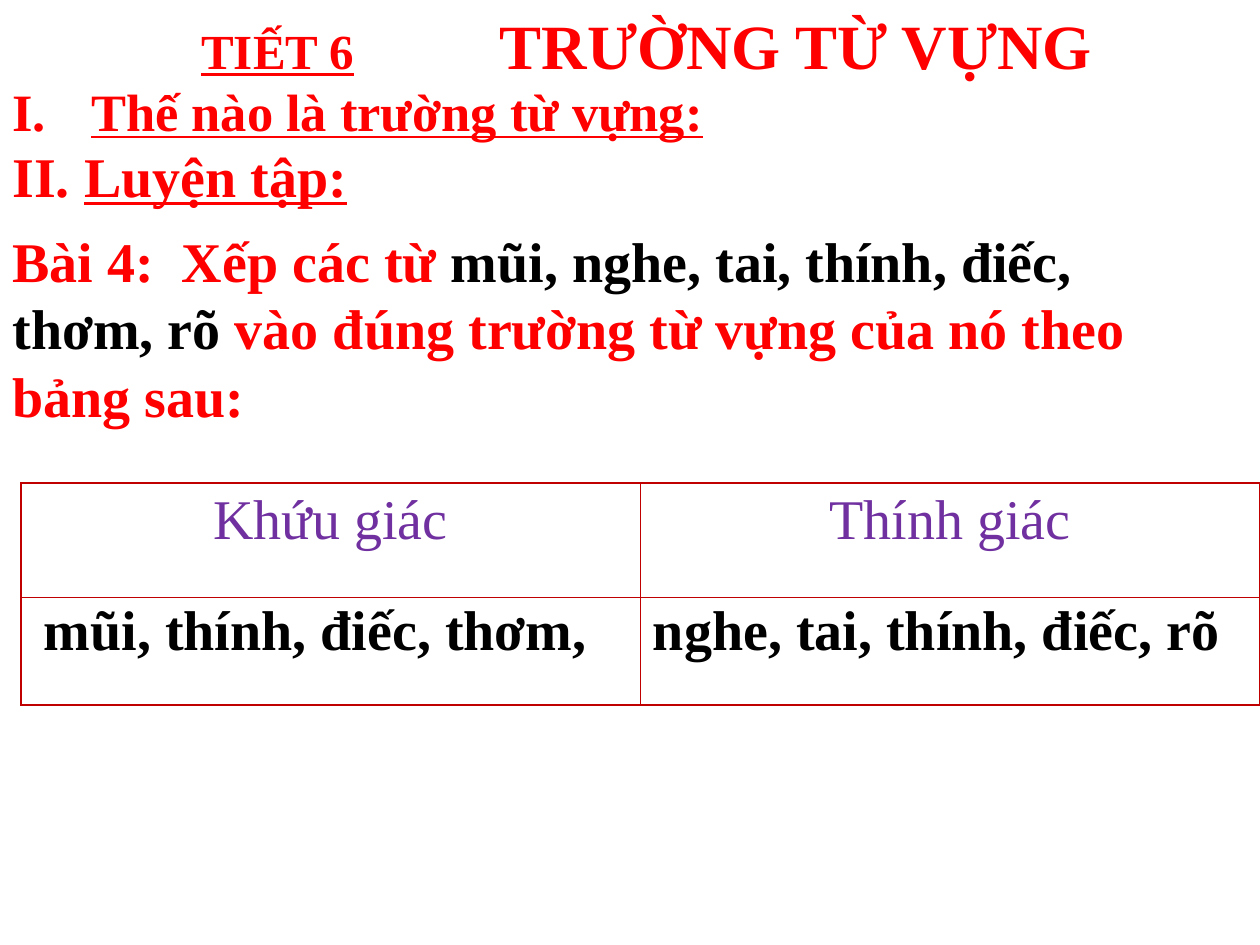
from lxml.etree import SubElement
from pptx import Presentation
from pptx.dml.color import RGBColor
from pptx.enum.text import MSO_AUTO_SIZE, PP_ALIGN
from pptx.oxml.ns import qn
from pptx.util import Pt

THEME = {
    "font": "Times New Roman",
    "red": "FF0000", "black": "000000", "purple": "7030A0",
    "border": "C00000", "white": "FFFFFF",
    "title": 36, "body": 32, "heading": 30, "label": 28,
}

# A run is (text, size, colour, underlined); a paragraph is a list of runs.
TITLE = [("TIẾT 6", "label", "red", True),
         ("\t", "label", "red", False),
         ("TRƯỜNG TỪ VỰNG", "title", "red", False)]
HEADINGS = [[("Thế nào là trường từ vựng:", "heading", "red", True)],
            [("II. ", "body", "red", False), ("Luyện tập:", "body", "red", True)]]
TASK = [("Bài 4:  Xếp các từ ", "body", "red", False),
        ("mũi, nghe, tai, thính, điếc, thơm, rõ ", "body", "black", False),
        ("vào đúng trường từ vựng của nó theo bảng sau:", "body", "red", False)]
SENSES = ["Khứu giác", "Thính giác"]
ANSWERS = [("mũi, thính, điếc, thơm,", 18, 342),
           ("nghe, tai, thính, điếc, rõ", 366, 384)]  # text, left, width

TITLE_TAB = 170.5
HEADING_INDENT = 45
ANSWER_TOP, LINE_BOX = 336, 46
TABLE_LEFT, TABLE_TOP, COL_WIDTH = 12, 276, 354
ROW_HEIGHTS = [65.5, 61.5]


def add_run(p, text, size, color, underline=False, bold=True):
    r = p.add_run()
    r.text = text
    f = r.font
    f.name, f.size = THEME["font"], Pt(THEME[size])
    f.bold, f.underline = bold, underline
    f.color.rgb = RGBColor.from_string(THEME[color])


def add_text(slide, box, paragraphs):
    tf = slide.shapes.add_textbox(*map(Pt, box)).text_frame
    tf.word_wrap = True
    tf.auto_size = MSO_AUTO_SIZE.SHAPE_TO_FIT_TEXT
    for i, runs in enumerate(paragraphs):
        p = tf.add_paragraph() if i else tf.paragraphs[0]
        for run in runs:
            add_run(p, *run)
    return tf


def add_title(slide):
    p = add_text(slide, (108, 0, 546, 51), [TITLE]).paragraphs[0]
    tabs = SubElement(p._p.get_or_add_pPr(), qn("a:tabLst"))
    SubElement(tabs, qn("a:tab"), pos=str(Pt(TITLE_TAB)), algn="l")


def add_headings(slide):
    """Hanging headings; the first has an automatic Roman numeral."""
    tf = add_text(slide, (0, 41.5, 432, 82), HEADINGS)
    for p in tf.paragraphs:
        pPr = p._p.get_or_add_pPr()
        pPr.set("marL", str(Pt(HEADING_INDENT)))
        pPr.set("indent", str(-Pt(HEADING_INDENT)))
    SubElement(tf.paragraphs[0]._p.pPr, qn("a:buAutoNum"), type="romanUcPeriod")


def style_cell(cell):
    tcPr = cell._tc.get_or_add_tcPr()
    for side in ("lnL", "lnR", "lnT", "lnB"):
        line = SubElement(tcPr, qn(f"a:{side}"), w=str(Pt(1)))
        SubElement(SubElement(line, qn("a:solidFill")), qn("a:srgbClr"),
                   val=THEME["border"])
    cell.fill.solid()
    cell.fill.fore_color.rgb = RGBColor.from_string(THEME["white"])


def add_sense_table(slide):
    box = (TABLE_LEFT, TABLE_TOP, COL_WIDTH * len(SENSES), sum(ROW_HEIGHTS))
    table = slide.shapes.add_table(len(ROW_HEIGHTS), len(SENSES), *map(Pt, box)).table
    for row, height in zip(table.rows, ROW_HEIGHTS):
        row.height = Pt(height)
    for col in table.columns:
        col.width = Pt(COL_WIDTH)
    for cell in table.iter_cells():
        style_cell(cell)
    for i, sense in enumerate(SENSES):
        p = table.cell(0, i).text_frame.paragraphs[0]
        p.alignment = PP_ALIGN.CENTER
        add_run(p, sense, "body", "purple", bold=False)


def main():
    prs = Presentation()
    prs.slide_width, prs.slide_height = Pt(720), Pt(540)
    s = prs.slides.add_slide(prs.slide_layouts[6])
    add_text(s, (0, 126, 696, 124), [TASK])
    add_sense_table(s)
    for text, left, width in ANSWERS:
        add_text(s, (left, ANSWER_TOP, width, LINE_BOX), [[(text, "body", "black")]])
    add_headings(s)
    add_title(s)
    prs.save("out.pptx")


if __name__ == "__main__":
    main()
